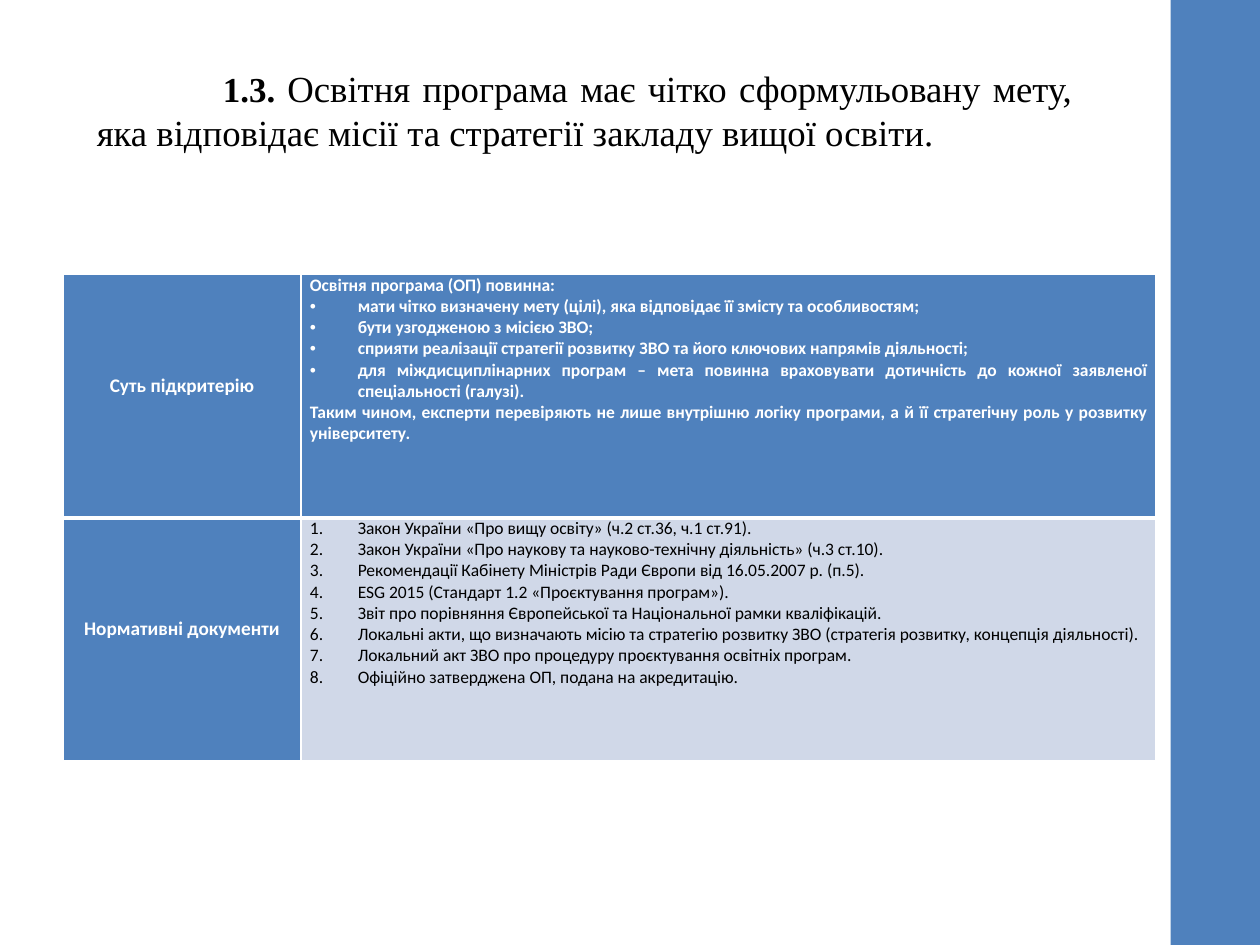
from lxml.etree import SubElement
from pptx import Presentation
from pptx.dml.color import RGBColor
from pptx.enum.shapes import MSO_SHAPE
from pptx.enum.text import MSO_ANCHOR, PP_ALIGN
from pptx.oxml import parse_xml
from pptx.oxml.ns import nsdecls, qn
from pptx.util import Inches, Pt

BLUE = RGBColor(0x4F, 0x81, 0xBD)
PALE_BLUE = RGBColor(0xD0, 0xD8, 0xE8)
WHITE = RGBColor(0xFF, 0xFF, 0xFF)
BLACK = RGBColor(0, 0, 0)

TITLE_RUNS = [
    ("1.3. ", 20, True),
    ("Освітня програма має чітко сформульовану мету, "
     "яка відповідає місії та стратегії закладу вищої освіти.", 21, False),
]
ESSENCE_INTRO = "Освітня програма (ОП) повинна:"
ESSENCE_POINTS = [
    "мати чітко визначену мету (цілі), яка відповідає її змісту та особливостям;",
    "бути узгодженою з місією ЗВО;",
    "сприяти реалізації стратегії розвитку ЗВО та його ключових напрямів діяльності;",
    "для міждисциплінарних програм – мета повинна враховувати дотичність "
    "до кожної заявленої спеціальності (галузі).",
]
ESSENCE_SUMMARY = (
    "Таким чином, експерти перевіряють не лише внутрішню логіку програми, "
    "а й її стратегічну роль у розвитку університету."
)
DOCUMENTS = [
    "Закон України «Про вищу освіту» (ч.2 ст.36, ч.1 ст.91).",
    "Закон України «Про наукову та науково-технічну діяльність» (ч.3 ст.10).",
    "Рекомендації Кабінету Міністрів Ради Європи від 16.05.2007 р. (п.5).",
    "ESG 2015 (Стандарт 1.2 «Проєктування програм»).",
    "Звіт про порівняння Європейської та Національної рамки кваліфікацій.",
    "Локальні акти, що визначають місію та стратегію розвитку ЗВО "
    "(стратегія розвитку, концепція діяльності).",
    "Локальний акт ЗВО про процедуру проєктування освітніх програм.",
    "Офіційно затверджена ОП, подана на акредитацію.",
]


def format_run(run, font_name, size, color, bold):
    run.font.name = font_name
    run.font.size = Pt(size)
    run.font.color.rgb = color
    run.font.bold = bold


def set_indent(paragraph, left, first_line):
    properties = paragraph._p.get_or_add_pPr()
    properties.set("marL", str(Inches(left)))
    properties.set("indent", str(Inches(first_line)))
    return properties


def add_marker(paragraph, tag, **attributes):
    properties = set_indent(paragraph, 0.38, -0.38)
    SubElement(properties, qn("a:buFont"), typeface="Arial" if tag == "a:buChar" else "+mj-lt")
    SubElement(properties, qn(tag), **attributes)


def add_bullet(paragraph):
    add_marker(paragraph, "a:buChar", char="•")


def add_number(paragraph):
    add_marker(paragraph, "a:buAutoNum", type="arabicPeriod")


def add_title(slide):
    box = slide.shapes.add_textbox(Inches(0.67), Inches(0.44), Inches(7.94), Inches(1.1))
    text_frame = box.text_frame
    text_frame.word_wrap = True
    text_frame.margin_top = Inches(0.08)
    paragraph = text_frame.paragraphs[0]
    paragraph.alignment = PP_ALIGN.JUSTIFY
    set_indent(paragraph, 0, 1)
    for text, size, bold in TITLE_RUNS:
        run = paragraph.add_run()
        run.text = text
        format_run(run, "Times New Roman", size, BLACK, bold)


def add_side_bar(slide):
    bar = slide.shapes.add_shape(
        MSO_SHAPE.RECTANGLE, Inches(9.29), 0, Inches(0.71), Inches(7.5))
    bar.shadow.inherit = False
    bar.fill.solid()
    bar.fill.fore_color.rgb = BLUE
    bar.line.fill.background()


def set_borders(cell, top, bottom):
    widths = {"lnL": 1, "lnR": 1, "lnT": top, "lnB": bottom}
    properties = cell._tc.get_or_add_tcPr()
    for position, (side, width) in enumerate(widths.items()):
        properties.insert(position, parse_xml(
            f'<a:{side} {nsdecls("a")} w="{Pt(width)}"><a:solidFill>'
            f'<a:srgbClr val="{WHITE}"/></a:solidFill></a:{side}>'))


def style_cell(cell, fill, top, bottom):
    cell.margin_left = cell.margin_right = Inches(0.07)
    cell.margin_top = cell.margin_bottom = 0
    cell.fill.solid()
    cell.fill.fore_color.rgb = fill
    set_borders(cell, top, bottom)


def fill_label(cell, text):
    cell.vertical_anchor = MSO_ANCHOR.MIDDLE
    cell.margin_bottom = Inches(0.2)
    cell.text_frame.text = text
    paragraph = cell.text_frame.paragraphs[0]
    paragraph.alignment = PP_ALIGN.CENTER
    paragraph.line_spacing = 1.15
    format_run(paragraph.runs[0], "Calibri", 11, WHITE, True)


def fill_details(cell, entries, color, bold):
    text_frame = cell.text_frame
    text_frame.text = "\n".join(text for text, _ in entries)
    for paragraph, (_, mark) in zip(text_frame.paragraphs, entries):
        paragraph.alignment = PP_ALIGN.JUSTIFY
        if mark:
            mark(paragraph)
        format_run(paragraph.runs[0], "Calibri", 10, color, bold)


def add_criteria_table(slide):
    essence = [(ESSENCE_INTRO, None),
               *((point, add_bullet) for point in ESSENCE_POINTS),
               (ESSENCE_SUMMARY, None)]
    documents = [(document, add_number) for document in DOCUMENTS]
    rows = [
        ("Суть підкритерію", essence, BLUE, WHITE, True, 1, 3),
        ("Нормативні документи", documents, PALE_BLUE, BLACK, False, 3, 1),
    ]
    table = slide.shapes.add_table(
        len(rows), 2, Inches(0.5), Inches(2.18), Inches(8.67), Inches(3.86)).table
    for column, width in zip(table.columns, (1.89, 6.78)):
        column.width = Inches(width)
    for index, (label, entries, fill, color, bold, top, bottom) in enumerate(rows):
        label_cell, details_cell = table.cell(index, 0), table.cell(index, 1)
        style_cell(label_cell, BLUE, top, bottom)
        style_cell(details_cell, fill, top, bottom)
        fill_label(label_cell, label)
        fill_details(details_cell, entries, color, bold)


def main():
    presentation = Presentation()
    presentation.slide_width = Inches(10)
    presentation.slide_height = Inches(7.5)
    slide = presentation.slides.add_slide(presentation.slide_layouts[6])
    add_title(slide)
    add_side_bar(slide)
    add_criteria_table(slide)
    presentation.save("out.pptx")


if __name__ == "__main__":
    main()
